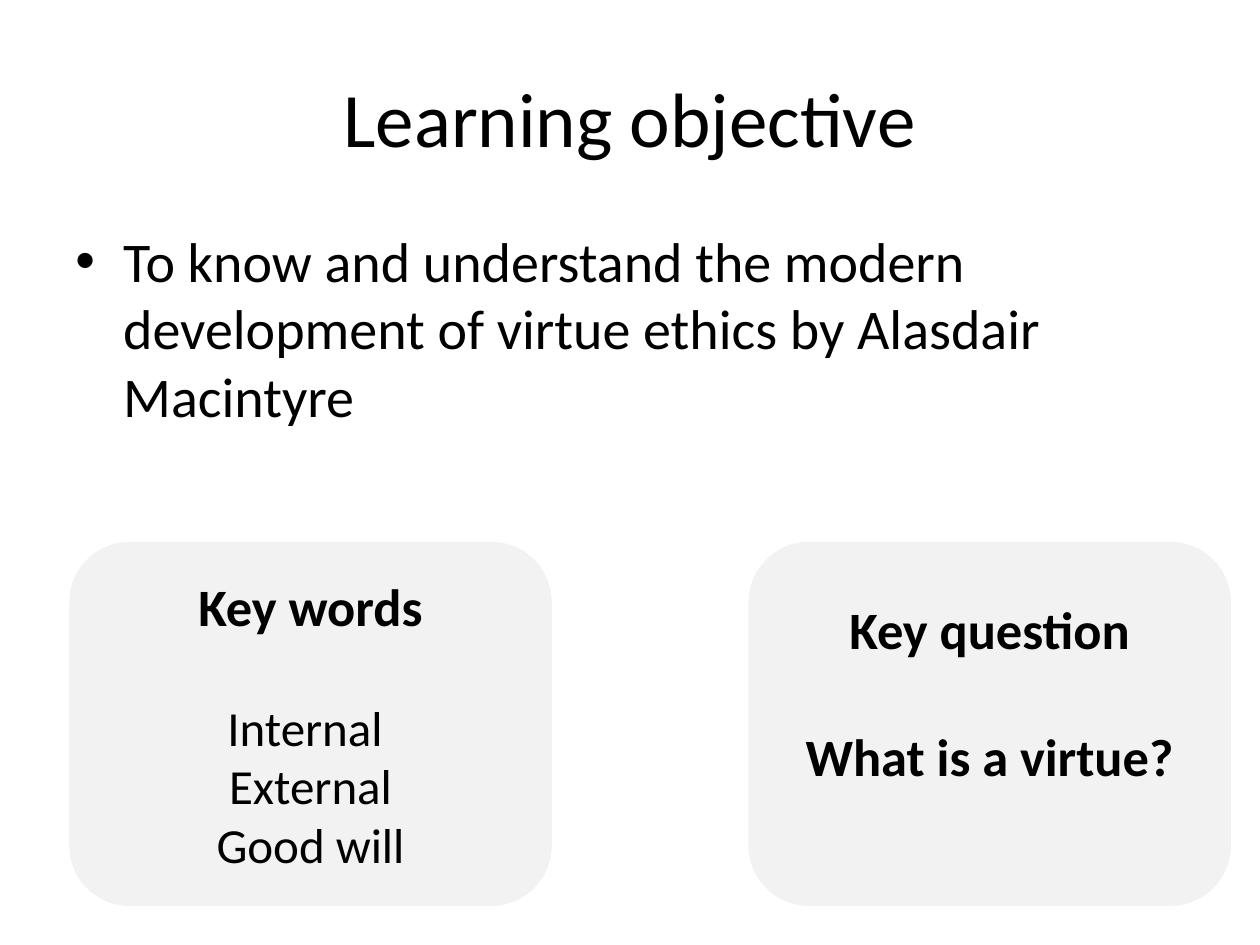
from dataclasses import dataclass

from lxml import etree
from pptx import Presentation, util as u
from pptx.dml.color import RGBColor
from pptx.enum import shapes, text
from pptx.oxml.ns import qn


@dataclass(frozen=True)
class Theme:
    font: str = "Calibri"
    ink: str = "000000"
    card: str = "F2F2F2"
    title: int = 44
    body: int = 32
    heading: int = 30
    word: int = 28
    line: float = 1.22  # line height as a share of the type size


THEME = Theme()
WIDTH, HEIGHT = 10, 7.5
MARGIN = 0.05 * WIDTH
CONTENT_WIDTH = WIDTH - 2 * MARGIN
CARD_TOP, CARD_WIDTH, CARD_HEIGHT = 4.3, 3.83, 2.89
CARD_LEFT, CARD_STEP = 0.55, 5.39
INSET, INDENT = 0.05, 0.38

TITLE = "Learning objective"
OBJECTIVE = ("To know and understand the modern development of virtue ethics "
             "by Alasdair Macintyre")

# Each line: text, size, bold, points of space before
CARDS = [
    {"lines": [("Key words", THEME.heading, True, 0),
               ("Internal ", THEME.word, False, THEME.word * THEME.line),
               ("External", THEME.word, False, 0),
               ("Good will", THEME.word, False, 0)],
     "space_below": 0},
    {"lines": [("Key question", THEME.heading, True, 0),
               ("What is a virtue?", THEME.heading, True, THEME.heading * THEME.line)],
     "space_below": THEME.heading * THEME.line},
]


def write(shape, lines, align, anchor):
    frame = shape.text_frame
    frame.word_wrap = True
    frame.vertical_anchor = anchor
    for index, (words, size, bold, space) in enumerate(lines):
        paragraph = frame.add_paragraph() if index else frame.paragraphs[0]
        paragraph.text = words
        paragraph.alignment = align
        paragraph.space_before = u.Pt(round(space, 1))
        font = paragraph.font
        font.name, font.size, font.bold = THEME.font, u.Pt(size), bold
        font.color.rgb = RGBColor.from_string(THEME.ink)


def add_text(slide, top, height, line, align, anchor):
    box = slide.shapes.add_textbox(*map(u.Inches, (MARGIN, top, CONTENT_WIDTH, height)))
    write(box, [line], align, anchor)
    return box


def add_bullet(paragraph):
    properties = paragraph._p.get_or_add_pPr()
    properties.set("marL", str(u.Inches(INDENT)))
    properties.set("indent", str(-u.Inches(INDENT)))
    etree.SubElement(properties, qn("a:buFont")).set("typeface", "Arial")
    etree.SubElement(properties, qn("a:buChar")).set("char", "•")


def add_card(slide, column, card):
    left = CARD_LEFT + column * CARD_STEP
    shape = slide.shapes.add_shape(
        shapes.MSO_SHAPE.ROUNDED_RECTANGLE,
        *map(u.Inches, (left, CARD_TOP, CARD_WIDTH, CARD_HEIGHT)))
    shape.shadow.inherit = False
    shape.fill.solid()
    shape.fill.fore_color.rgb = RGBColor.from_string(THEME.card)
    shape.line.fill.background()
    write(shape, card["lines"], text.PP_ALIGN.CENTER, text.MSO_ANCHOR.MIDDLE)
    shape.text_frame.margin_bottom = u.Inches(INSET) + u.Pt(card["space_below"])


def main():
    presentation = Presentation()
    presentation.slide_width, presentation.slide_height = u.Inches(WIDTH), u.Inches(HEIGHT)
    slide = presentation.slides.add_slide(presentation.slide_layouts[6])
    add_text(slide, 0.3, 1.25, (TITLE, THEME.title, False, 0),
             text.PP_ALIGN.CENTER, text.MSO_ANCHOR.MIDDLE)
    objective = add_text(slide, 1.75, 4.95, (OBJECTIVE, THEME.body, False, 0.2 * THEME.body),
                         text.PP_ALIGN.LEFT, text.MSO_ANCHOR.TOP)
    add_bullet(objective.text_frame.paragraphs[0])
    for column, card in enumerate(CARDS):
        add_card(slide, column, card)
    presentation.save("out.pptx")


if __name__ == "__main__":
    main()
